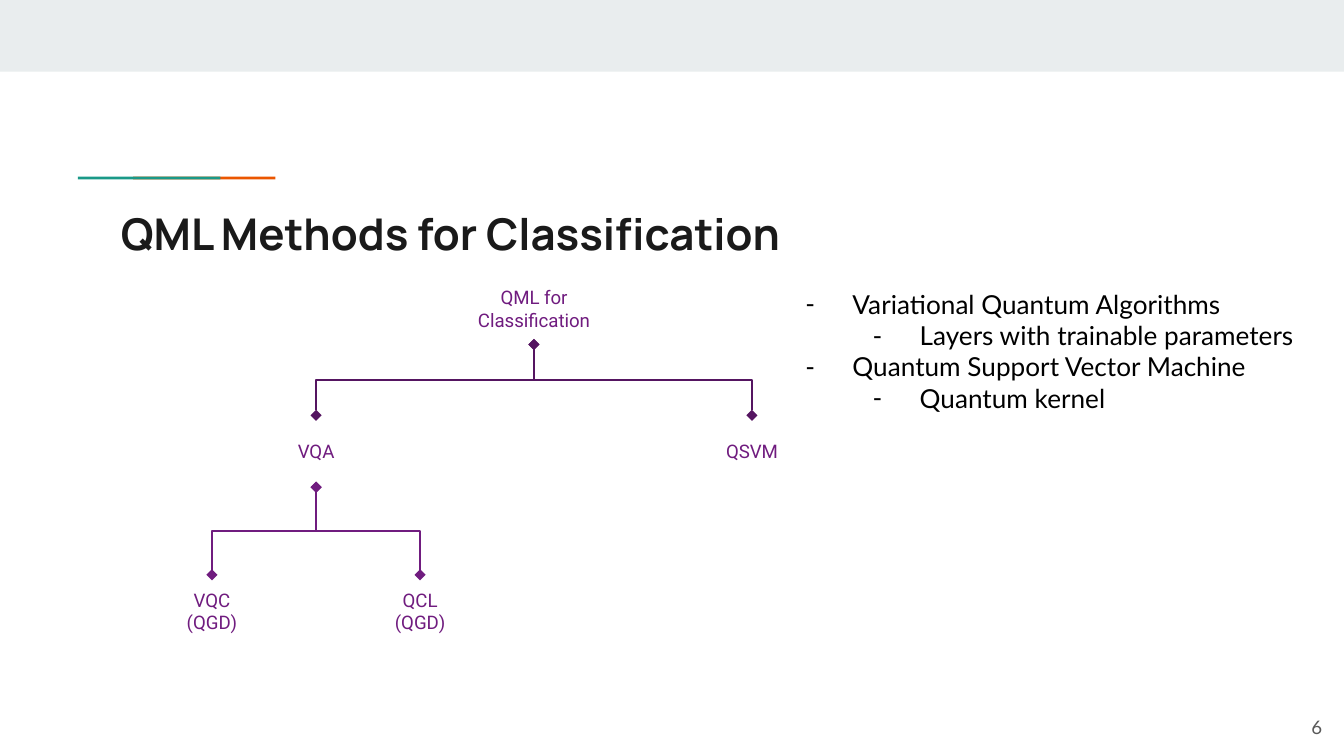
from dataclasses import dataclass
from typing import Optional

from lxml.etree import SubElement
from pptx import Presentation
from pptx.dml.color import RGBColor
from pptx.enum.shapes import MSO_CONNECTOR, MSO_SHAPE
from pptx.enum.text import MSO_ANCHOR, MSO_AUTO_SIZE, PP_ALIGN
from pptx.oxml.ns import qn
from pptx.shapes.base import BaseShape
from pptx.slide import Slide
from pptx.text.text import TextFrame, _Paragraph
from pptx.util import Inches, Pt

COLUMNS, ROWS = 100, 56.25
CELL = Inches(0.1)


@dataclass(frozen=True)
class TextStyle:
    font: str
    size: float
    color: str
    bold: bool = False


@dataclass(frozen=True)
class Theme:
    band: str = "E9EDEE"
    teal: str = "1A9988"
    orange: str = "EB5600"
    upper_branch: str = "551561"
    lower_branch: str = "701C7F"
    branch_width: float = 0.75
    title: TextStyle = TextStyle("Manrope", 23.4, "1A1A1A", True)
    node: TextStyle = TextStyle("Roboto", 10, "701C7F")
    body: TextStyle = TextStyle("Lato", 14, "000000")
    number: TextStyle = TextStyle("Lato", 10, "595959")


@dataclass(frozen=True)
class Area:
    column: float
    row: float
    columns: float
    rows: float

    def lengths(self) -> tuple[int, ...]:
        return tuple(round(value * CELL) for value in (self.column, self.row, self.columns, self.rows))


@dataclass(frozen=True)
class Node:
    lines: tuple[str, ...]
    center: float
    level: int
    parent: Optional["Node"] = None

    def area(self) -> Area:
        return Area(self.center - NODE_COLUMNS / 2, LEVEL_ROWS[self.level], NODE_COLUMNS, NODE_ROWS)


@dataclass(frozen=True)
class Bullet:
    text: str
    level: int


THEME = Theme()
NODE_COLUMNS, NODE_ROWS = 14.1, 5.35
LEVEL_ROWS = (20.28, 30.9, 42.77)
ROOT = Node(("QML for Classification",), 39.73, 0)
VQA = Node(("VQA",), 23.52, 1, ROOT)
NODES = (
    ROOT,
    VQA,
    Node(("QSVM",), 55.95, 1, ROOT),
    Node(("VQC", "(QGD)"), 15.77, 2, VQA),
    Node(("QCL", "(QGD)"), 31.26, 2, VQA),
)
BULLETS = (
    Bullet("Variational Quantum Algorithms", 0),
    Bullet("Layers with trainable parameters", 1),
    Bullet("Quantum Support Vector Machine", 0),
    Bullet("Quantum kernel", 1),
)


def place(shape: BaseShape, area: Area) -> None:
    shape.left, shape.top, shape.width, shape.height = area.lengths()


def add_text_run(paragraph: _Paragraph, text: str, style: TextStyle) -> None:
    run = paragraph.add_run()
    run.text = text
    run.font.name = style.font
    run.font.size = Pt(style.size)
    run.font.bold = style.bold
    run.font.color.rgb = RGBColor.from_string(style.color)


def prepare_frame(frame: TextFrame, anchor: MSO_ANCHOR) -> None:
    frame.word_wrap = True
    frame.auto_size = MSO_AUTO_SIZE.NONE
    frame.vertical_anchor = anchor
    frame.margin_left = frame.margin_right = frame.margin_top = frame.margin_bottom = CELL


def add_paragraph(frame: TextFrame, index: int) -> _Paragraph:
    return frame.add_paragraph() if index else frame.paragraphs[0]


def add_bar(slide: Slide, area: Area, color: str) -> None:
    shape = slide.shapes.add_shape(MSO_SHAPE.RECTANGLE, *area.lengths())
    shape.shadow.inherit = False
    shape.fill.solid()
    shape.fill.fore_color.rgb = RGBColor.from_string(color)
    shape.line.fill.background()


def add_label(slide: Slide, area: Area, lines: tuple[str, ...], style: TextStyle, alignment: PP_ALIGN) -> None:
    frame = slide.shapes.add_textbox(*area.lengths()).text_frame
    prepare_frame(frame, MSO_ANCHOR.MIDDLE)
    for index, line in enumerate(lines):
        paragraph = add_paragraph(frame, index)
        paragraph.alignment = alignment
        add_text_run(paragraph, line, style)


def add_branch(slide: Slide, parent: Node, child: Node) -> None:
    start = LEVEL_ROWS[parent.level] + NODE_ROWS
    end = LEVEL_ROWS[child.level]
    drop, spread = end - start, abs(child.center - parent.center)
    middle_column, middle_row = (parent.center + child.center) / 2, (start + end) / 2
    left, top, width, height = Area(middle_column - drop / 2, middle_row - spread / 2, drop, spread).lengths()
    sides = (left, left + width)
    begin, finish = sides if child.center < parent.center else sides[::-1]
    connector = slide.shapes.add_connector(MSO_CONNECTOR.ELBOW, begin, top, finish, top + height)
    color = THEME.lower_branch if parent.level else THEME.upper_branch
    connector.line.color.rgb = RGBColor.from_string(color)
    connector.line.width = Pt(THEME.branch_width)
    properties = connector._element.spPr
    properties.find(qn("a:xfrm")).set("rot", str(270 * 60000))
    line = properties.find(qn("a:ln"))
    for ending in ("a:headEnd", "a:tailEnd"):
        SubElement(line, qn(ending), type="diamond")
    SubElement(properties, qn("a:effectLst"))


def fill_title(slide: Slide) -> None:
    title = slide.shapes.title
    place(title, Area(8, 14.4, 84.1, 4.7))
    prepare_frame(title.text_frame, MSO_ANCHOR.TOP)
    paragraph = title.text_frame.paragraphs[0]
    paragraph.alignment = PP_ALIGN.LEFT
    add_text_run(paragraph, "QML Methods for Classification", THEME.title)


def fill_list(slide: Slide) -> None:
    body = slide.placeholders[1]
    place(body, Area(57.43, 20.43, 42.57, 11.4))
    prepare_frame(body.text_frame, MSO_ANCHOR.TOP)
    for index, bullet in enumerate(BULLETS):
        paragraph = add_paragraph(body.text_frame, index)
        paragraph.level = bullet.level
        paragraph.alignment = PP_ALIGN.LEFT
        paragraph.space_before = Pt(0)
        properties = paragraph._p.get_or_add_pPr()
        properties.set("marL", str(Inches(0.5 * (bullet.level + 1))))
        properties.set("indent", str(Inches(-0.35)))
        bullet_color = SubElement(properties, qn("a:buClr"))
        SubElement(bullet_color, qn("a:srgbClr"), val=THEME.body.color)
        SubElement(properties, qn("a:buFont"), typeface=THEME.body.font)
        SubElement(properties, qn("a:buChar"), char="-")
        add_text_run(paragraph, bullet.text, THEME.body)


def main() -> None:
    presentation = Presentation()
    presentation.slide_width = round(COLUMNS * CELL)
    presentation.slide_height = round(ROWS * CELL)
    slide = presentation.slides.add_slide(presentation.slide_layouts[1])
    add_bar(slide, Area(0, 0, COLUMNS, 5.33), THEME.band)
    add_bar(slide, Area(9.9, 13.15, 10.6, 0.2), THEME.orange)
    add_bar(slide, Area(5.8, 13.15, 10.6, 0.2), THEME.teal)
    fill_title(slide)
    add_label(slide, Area(93.36, 51.95, 6, 4.3), ("6",), THEME.number, PP_ALIGN.RIGHT)
    for node in NODES:
        if node.parent:
            add_branch(slide, node.parent, node)
    for node in NODES:
        add_label(slide, node.area(), node.lines, THEME.node, PP_ALIGN.CENTER)
    fill_list(slide)
    presentation.save("out.pptx")


if __name__ == "__main__":
    main()
